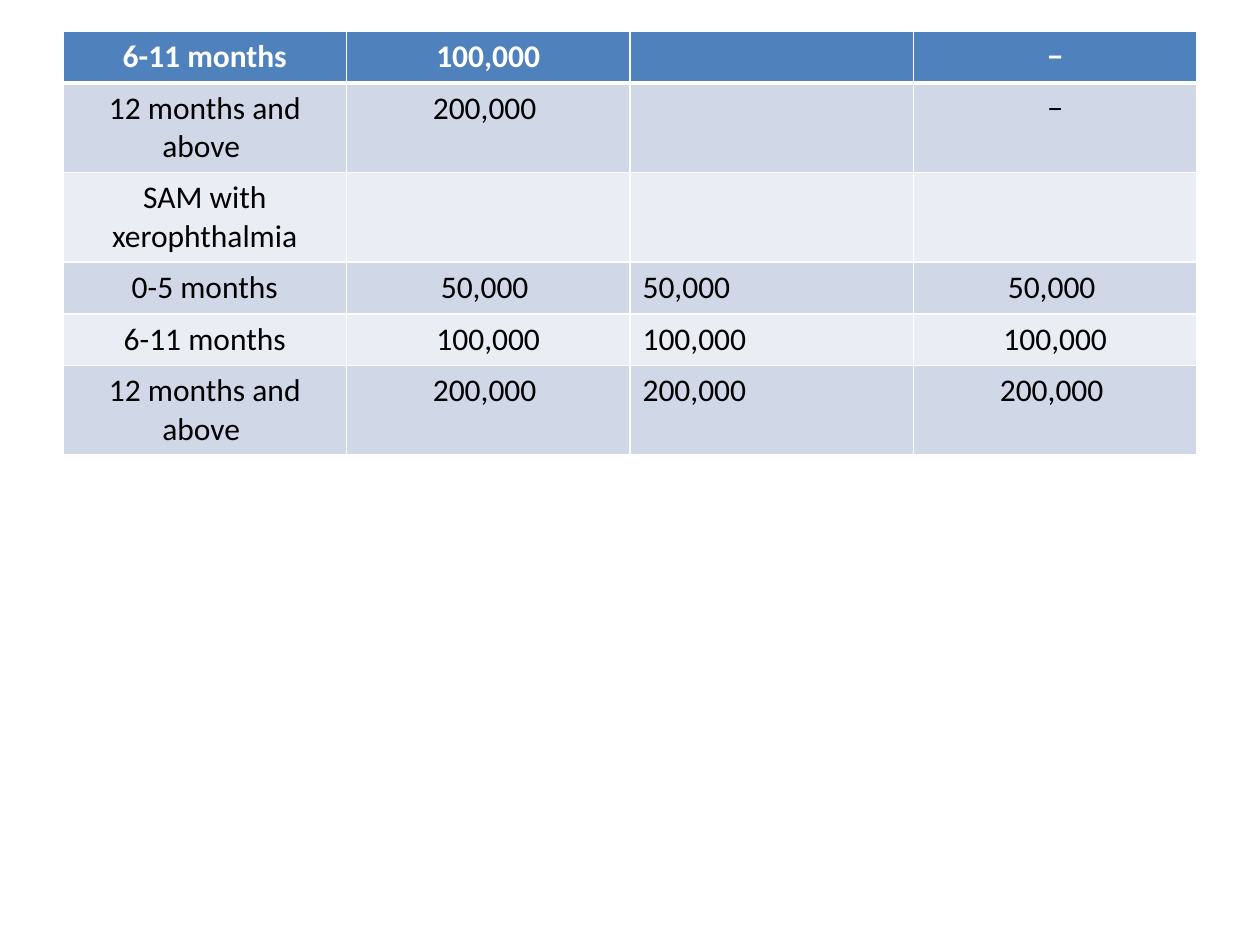
import pptx
import pptx.util
import pptx.dml.color
import pptx.enum.text
import pptx.oxml
import pptx.oxml.ns

PX = 9144  # EMU per px, 100 px to the inch
HEX = {"head": "4F81BD", "odd": "D0D8E8", "even": "E9EDF4",
       "white": "FFFFFF", "black": "000000"}
ALIGN = pptx.enum.text.PP_ALIGN

DOSES = [
    ["6-11 months", "100,000", "", "−"],
    ["12 months and above ", "200,000 ", "", "−"],
    ["SAM with xerophthalmia", "", "", ""],
    ["0-5 months", "50,000 ", "50,000", "50,000 "],
    ["6-11 months", "100,000", "100,000", "100,000"],
    ["12 months and above ", "200,000 ", "200,000", "200,000 "],
]


def rgb(name):
    return pptx.dml.color.RGBColor.from_string(HEX[name])


def write(frame, text, size=18, color="black", bold=False, align=ALIGN.CENTER):
    para = frame.paragraphs[0]
    para.alignment = align
    run = para.add_run()
    run.text = text
    run.font.name = "Calibri"
    run.font.size = pptx.util.Pt(size)
    run.font.bold = bold
    run.font.color.rgb = rgb(color)


class Deck:
    def __init__(self, wide, high):
        self.show = pptx.Presentation()
        self.show.slide_width = wide * PX
        self.show.slide_height = high * PX
        self.slide = self.show.slides.add_slide(self.show.slide_layouts[6])

    def edge(self, cell, side, width):
        line = pptx.oxml.parse_xml(
            f'<a:ln{side} {pptx.oxml.ns.nsdecls("a")} w="{pptx.util.Pt(width)}">'
            f'<a:solidFill><a:srgbClr val="{HEX["white"]}"/></a:solidFill>'
            f'</a:ln{side}>')
        cell._tc.get_or_add_tcPr().append(line)

    def table(self, rows, left, top, wide, high, row_high):
        shape = self.slide.shapes.add_table(
            len(rows), len(rows[0]), left * PX, top * PX, wide * PX, high * PX)
        grid = shape.table
        for r, row in enumerate(rows):
            grid.rows[r].height = row_high * PX
            head = r == 0
            band = "head" if head else "odd" if r % 2 else "even"
            # The rule below the header is thicker
            edges = {"L": 1, "R": 1, "T": 3 if r == 1 else 1, "B": 3 if head else 1}
            for c, text in enumerate(row):
                cell = grid.cell(r, c)
                for side, width in edges.items():
                    self.edge(cell, side, width)
                cell.fill.solid()
                cell.fill.fore_color.rgb = rgb(band)
                if text:
                    write(cell.text_frame, text, bold=head,
                          color="white" if head else "black",
                          align=ALIGN.LEFT if c == 2 else ALIGN.CENTER)


def main():
    deck = Deck(1000, 750)
    # Dose table by age group
    deck.table(DOSES, 50, 25, 900, 332, row_high=41)
    deck.show.save("out.pptx")


if __name__ == "__main__":
    main()
